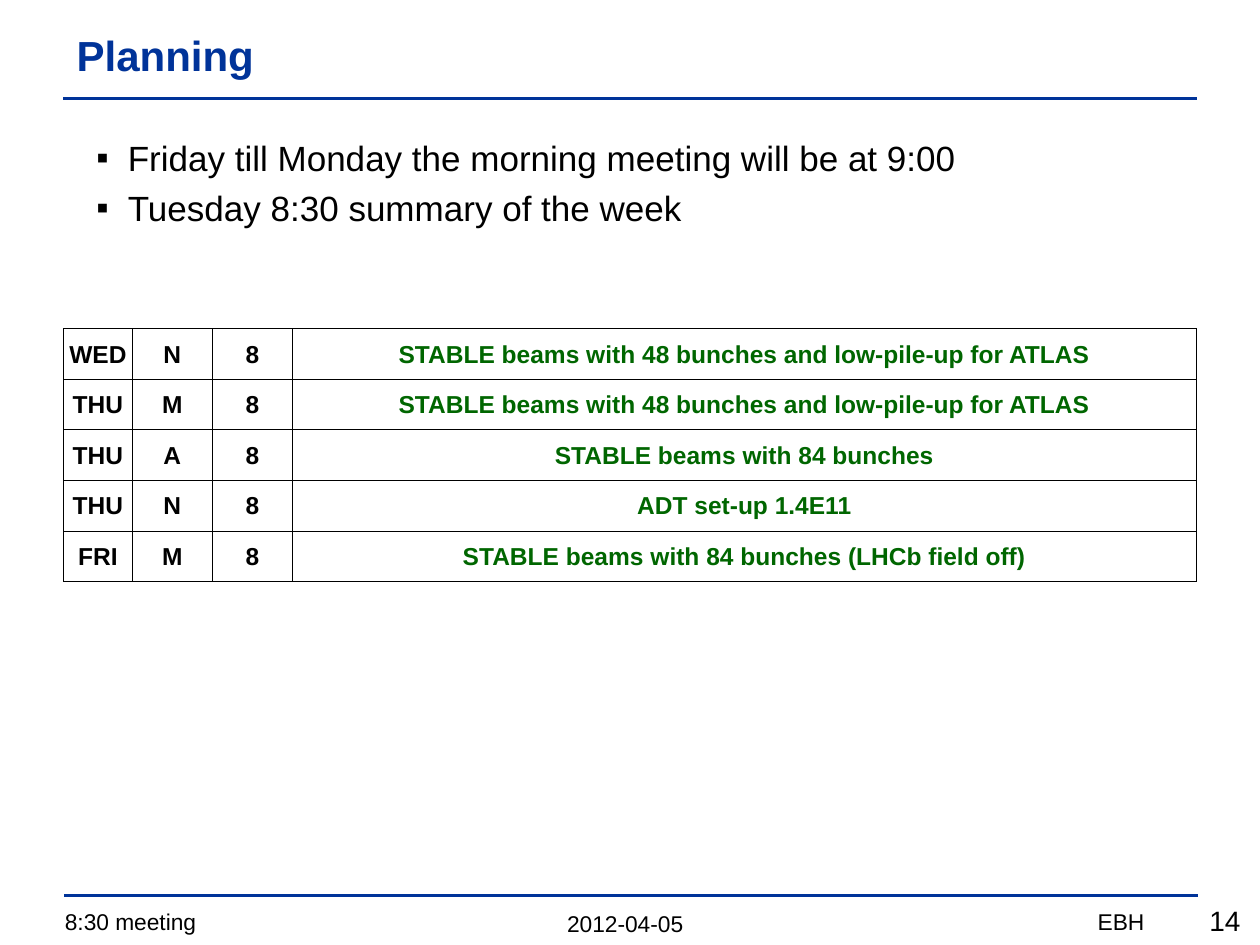
from lxml import etree
from pptx import Presentation
from pptx import util as u
from pptx.dml.color import RGBColor
from pptx.enum import shapes, text
from pptx.oxml import ns

Pt = u.Pt
LEFT, CENTER, RIGHT = text.PP_ALIGN.LEFT, text.PP_ALIGN.CENTER, text.PP_ALIGN.RIGHT
TOP, MIDDLE = text.MSO_ANCHOR.TOP, text.MSO_ANCHOR.MIDDLE
BLUE, BLACK, GREEN, WHITE = "003399", "000000", "006600", "FFFFFF"


def color(value):
    return RGBColor.from_string(value)


def add_xml(parent, tag, **attrs):
    return etree.SubElement(parent, ns.qn(tag), **attrs)


class SlideBuilder:
    font = "Arial"

    def __init__(self, slide):
        self.s = slide

    def style(self, p, size, hue=BLACK, bold=False, align=LEFT):
        p.alignment = align
        for r in p.runs:
            r.font.name, r.font.size, r.font.bold = self.font, Pt(size), bold
            r.font.color.rgb = color(hue)

    def text(self, content, x, y, w, h, size, hue=BLACK, bold=False,
             align=LEFT, anchor=TOP):
        tf = self.s.shapes.add_textbox(Pt(x), Pt(y), Pt(w), Pt(h)).text_frame
        tf.word_wrap = True
        tf.vertical_anchor = anchor
        tf.text = content
        for p in tf.paragraphs:
            self.style(p, size, hue, bold, align)
        return tf

    def bullets(self, items, x, y, w, h, size, indent):
        tf = self.text("\n".join(items), x, y, w, h, size)
        for p in tf.paragraphs:
            p.space_before = Pt(size * 0.23)
            pPr = p._p.get_or_add_pPr()
            pPr.set("marL", str(Pt(indent)))
            pPr.set("indent", str(-Pt(indent)))
            add_xml(pPr, "a:buFont", typeface=self.font)
            add_xml(pPr, "a:buChar", char="▪")

    def rule(self, x, y, w):
        line = self.s.shapes.add_connector(
            shapes.MSO_CONNECTOR.STRAIGHT, Pt(x), Pt(y), Pt(x + w), Pt(y))
        line.line.color.rgb = color(BLUE)
        line.line.width = Pt(1.5)
        add_xml(line._element.spPr, "a:effectLst")

    def border(self, cell):
        tcPr = cell._tc.get_or_add_tcPr()
        for side in ("a:lnL", "a:lnR", "a:lnT", "a:lnB"):
            ln = add_xml(tcPr, side, w=str(Pt(0.5)))
            add_xml(add_xml(ln, "a:solidFill"), "a:srgbClr", val=BLACK)

    def table(self, rows, x, y, widths, row_h, size):
        frame = self.s.shapes.add_table(
            len(rows), len(widths), Pt(x), Pt(y), Pt(sum(widths)), Pt(row_h * len(rows)))
        table = frame.table
        table.first_row = table.horz_banding = False
        for column, width in zip(table.columns, widths):
            column.width = Pt(width)
        for i, row in enumerate(rows):
            table.rows[i].height = Pt(row_h)
            for j, content in enumerate(row):
                cell = table.cell(i, j)
                cell.margin_left = cell.margin_right = cell.margin_top = Pt(0.7)
                cell.margin_bottom = 0
                cell.vertical_anchor = MIDDLE
                cell.text = content
                is_plan = j == len(row) - 1
                self.style(cell.text_frame.paragraphs[0], size,
                           GREEN if is_plan else BLACK, True, CENTER)
                self.border(cell)
                if is_plan:
                    cell.fill.solid()
                    cell.fill.fore_color.rgb = color(WHITE)
                else:
                    cell.fill.background()


def main():
    prs = Presentation()
    prs.slide_width, prs.slide_height = Pt(720), Pt(540)
    b = SlideBuilder(prs.slides.add_slide(prs.slide_layouts[6]))

    # Footer
    b.text("2012-04-05", 174.2, 516.2, 366, 23, 13, align=CENTER)
    b.text("8:30 meeting", 30, 515, 266, 23, 13)
    b.text("EBH", 451, 515, 210, 23, 13, align=RIGHT)
    b.rule(36.8, 511.7, 648)
    b.text("14", 633, 512.6, 82.8, 26.6, 16, align=RIGHT)

    # Title
    b.rule(36, 56.2, 648)
    b.text("Planning", 36.7, 6.5, 647, 49, 24, BLUE, True, anchor=MIDDLE)

    # Shift plan
    low_pile_up = "STABLE beams with 48 bunches and low-pile-up for ATLAS"
    shifts = [
        ("WED", "N", "8", low_pile_up),
        ("THU", "M", "8", low_pile_up),
        ("THU", "A", "8", "STABLE beams with 84 bunches"),
        ("THU", "N", "8", "ADT set-up 1.4E11"),
        ("FRI", "M", "8", "STABLE beams with 84 bunches (LHCb field off)"),
    ]
    b.table(shifts, 36.4, 187.8, (39.2, 45.8, 45.8, 516.5), 28.93, 14)

    # Meeting times
    b.bullets(["Friday till Monday the morning meeting will be at 9:00",
               "Tuesday 8:30 summary of the week"], 48, 74.2, 648, 443.5, 20, 18)

    prs.save("out.pptx")


if __name__ == "__main__":
    main()
